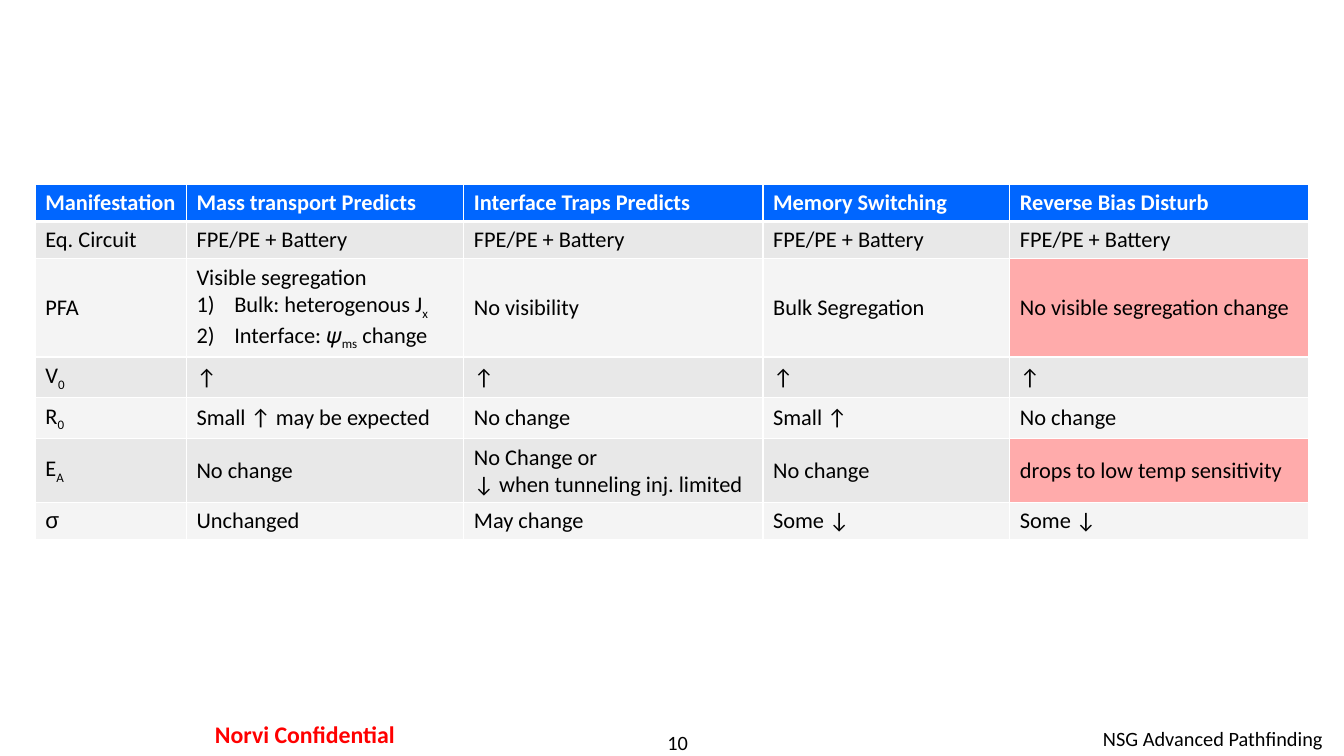
import dataclasses

import lxml.etree
import pptx
import pptx.dml.color
import pptx.enum.text
import pptx.oxml.ns
import pptx.util

Cm = pptx.util.Cm
Pt = pptx.util.Pt
ALIGN = pptx.enum.text.PP_ALIGN
qn = pptx.oxml.ns.qn


@dataclasses.dataclass(frozen=True)
class Theme:
    font: str = "Calibri"
    symbol_font: str = "Arial"
    text: str = "000000"
    header_text: str = "FFFFFF"
    header_fill: str = "0066FF"
    bands: tuple = ("E8E8E8", "F4F4F4")
    conflict: str = "FF0000"
    conflict_alpha: int = 33
    grid: str = "FFFFFF"
    notice: str = "FF0000"
    table_size: float = 16
    footer_size: float = 14.5
    notice_size: float = 17


THEME = Theme()
SUBSCRIPT = "~"
NUMBERED = "# "
CONFLICTS = {"No visible segregation change", "drops to low temp sensitivity"}
COLUMN_WIDTHS = (3.81, 6.99, 7.54, 6.22, 7.54)
ROW_HEIGHTS = (0.93, 0.94, 2.46, 1.03, 1.03, 1.6, 0.93)
MECHANISMS = (
    ("Manifestation", "Mass transport Predicts", "Interface Traps Predicts",
     "Memory Switching", "Reverse Bias Disturb"),
    ("Eq. Circuit",) + ("FPE/PE + Battery",) * 4,
    ("PFA",
     "Visible segregation\n# Bulk: heterogenous J~x~\n# Interface: 𝜓~ms~ change",
     "No visibility", "Bulk Segregation", "No visible segregation change"),
    ("V~0~",) + ("↑",) * 4,
    ("R~0~", "Small ↑ may be expected", "No change", "Small ↑", "No change"),
    ("E~A~", "No change", "No Change or\n↓ when tunneling inj. limited",
     "No change", "drops to low temp sensitivity"),
    ("σ", "Unchanged", "May change", "Some ↓", "Some ↓"),
)


def rgb(value):
    return pptx.dml.color.RGBColor.from_string(value)


def add_run(paragraph, text, size, color, bold=False, subscript=False):
    run = paragraph.add_run()
    run.text = text
    run.font.name = THEME.symbol_font if text == "σ" else THEME.font
    run.font.size = Pt(size)
    run.font.bold = bold
    run.font.color.rgb = rgb(color)
    if subscript:
        run._r.get_or_add_rPr().set("baseline", "-25000")


def number_paragraph(paragraph):
    properties = paragraph._p.get_or_add_pPr()
    properties.set("marL", str(Cm(0.95)))
    properties.set("indent", str(-Cm(0.95)))
    numbering = lxml.etree.SubElement(properties, qn("a:buAutoNum"))
    numbering.set("type", "arabicParenR")


def fill_text(frame, content, color, bold):
    for index, line in enumerate(content.split("\n")):
        paragraph = frame.add_paragraph() if index else frame.paragraphs[0]
        if line.startswith(NUMBERED):
            number_paragraph(paragraph)
        parts = line.removeprefix(NUMBERED).split(SUBSCRIPT)
        for position, part in enumerate(parts):
            if part:
                add_run(paragraph, part, THEME.table_size, color, bold,
                        subscript=position % 2 == 1)


def set_borders(cell, widths):
    properties = cell._tc.get_or_add_tcPr()
    for side, width in widths.items():
        border = lxml.etree.SubElement(properties, qn(f"a:ln{side}"))
        border.set("w", str(Pt(width)))
        fill = lxml.etree.SubElement(border, qn("a:solidFill"))
        lxml.etree.SubElement(fill, qn("a:srgbClr")).set("val", THEME.grid)


def set_fill(cell, color, alpha=None):
    cell.fill.solid()
    cell.fill.fore_color.rgb = rgb(color)
    if alpha is not None:
        value = cell._tc.tcPr.find(qn("a:solidFill")).find(qn("a:srgbClr"))
        lxml.etree.SubElement(value, qn("a:alpha")).set("val", str(alpha * 1000))


def add_mechanism_table(slide):
    frame = slide.shapes.add_table(
        len(MECHANISMS), len(COLUMN_WIDTHS), Cm(0.89), Cm(4.65),
        Cm(sum(COLUMN_WIDTHS)), Cm(sum(ROW_HEIGHTS)))
    table = frame.table
    for column, width in zip(table.columns, COLUMN_WIDTHS):
        column.width = Cm(width)
    for row, height in zip(table.rows, ROW_HEIGHTS):
        row.height = Cm(height)
    for row_index, contents in enumerate(MECHANISMS):
        header = row_index == 0
        for column_index, content in enumerate(contents):
            cell = table.cell(row_index, column_index)
            cell.vertical_anchor = pptx.enum.text.MSO_ANCHOR.MIDDLE
            set_borders(cell, {"L": 1, "R": 1,
                               "T": 3 if row_index == 1 else 1,
                               "B": 3 if header else 1})
            if header:
                set_fill(cell, THEME.header_fill)
            elif content in CONFLICTS:
                set_fill(cell, THEME.conflict, THEME.conflict_alpha)
            else:
                set_fill(cell, THEME.bands[(row_index - 1) % 2])
            fill_text(cell.text_frame, content,
                      THEME.header_text if header else THEME.text, header)


def add_footer(slide, text, box, inset, align, size, color, bold=False):
    footer = slide.shapes.add_textbox(*(Cm(length) for length in box))
    frame = footer.text_frame
    frame.word_wrap = True
    frame.margin_left = frame.margin_right = Cm(inset[0])
    frame.margin_top = frame.margin_bottom = Cm(inset[1])
    paragraph = frame.paragraphs[0]
    paragraph.alignment = align
    add_run(paragraph, text, size, color, bold)


def main():
    deck = pptx.Presentation()
    deck.slide_width = Cm(33.87)
    deck.slide_height = Cm(19.05)
    slide = deck.slides.add_slide(deck.slide_layouts.get_by_name("Blank"))
    add_footer(slide, "10", (14.12, 18.39, 5.92, 0.61), (0, 0),
               ALIGN.CENTER, THEME.footer_size, THEME.text)
    add_footer(slide, "NSG Advanced Pathfinding", (22.43, 18.16, 11.15, 0.89),
               (0.25, 0.13), ALIGN.RIGHT, THEME.footer_size, THEME.text)
    add_footer(slide, "Norvi Confidential", (3.94, 17.98, 7.49, 1.04),
               (0.3, 0.15), ALIGN.CENTER, THEME.notice_size, THEME.notice, True)
    add_mechanism_table(slide)
    deck.save("out.pptx")


if __name__ == "__main__":
    main()
